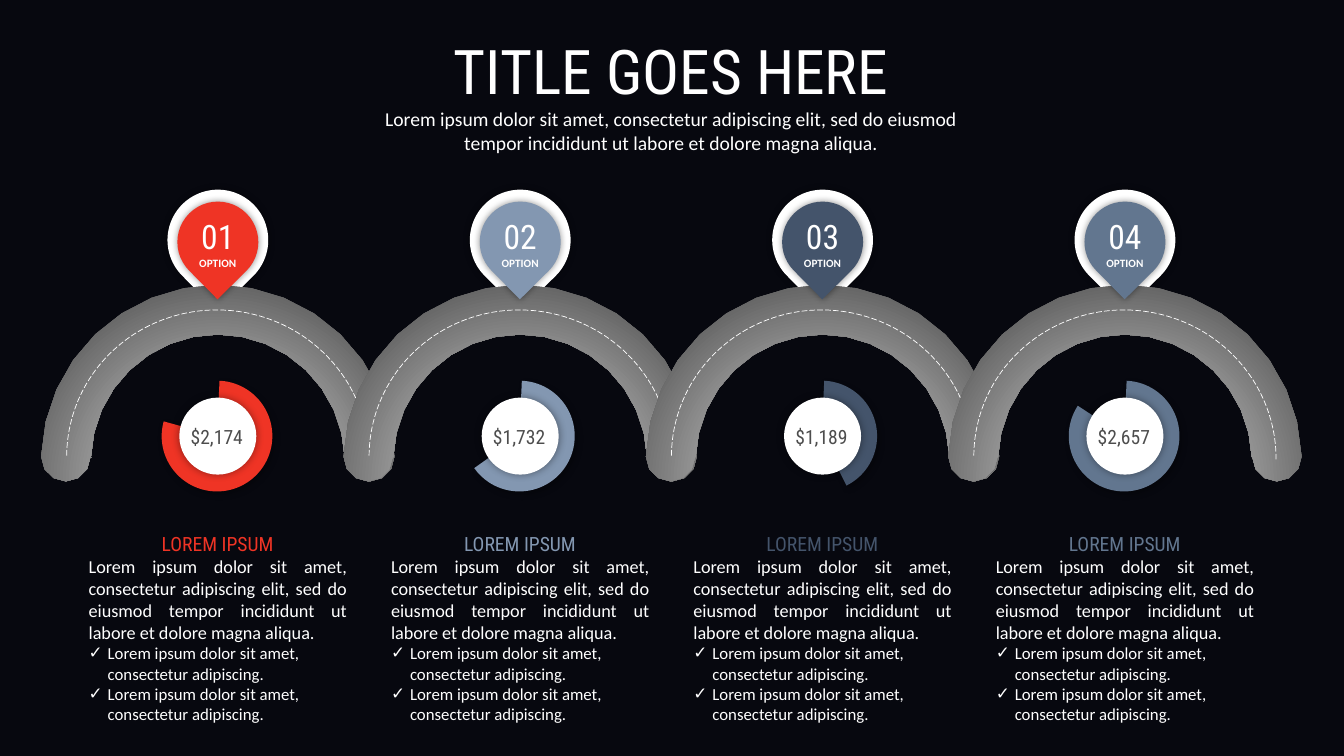
from math import cos, radians, sin

from pptx import Presentation
from pptx.dml.color import RGBColor
from pptx.enum.dml import MSO_LINE
from pptx.enum.shapes import MSO_SHAPE
from pptx.enum.text import MSO_ANCHOR, MSO_AUTO_SIZE, PP_ALIGN
from pptx.oxml import parse_xml
from pptx.oxml.ns import nsdecls, qn
from pptx.util import Cm, Pt

COLORS = {
    "night": "07080F",
    "white": "FFFFFF",
    "amount": "4D4D4D",
    "red": "EF3425",
    "mist": "8397B1",
    "slate": "44546B",
    "steel": "62768F",
}
ROAD_STOPS = [(0, "DBDBDB"), (46, "AAAAAA"), (100, "636363")]
HEADING = "Roboto Condensed"
BODY = "Calibri"
SENTENCE = (
    "Lorem ipsum dolor sit amet, consectetur adipiscing elit, sed do eiusmod "
    "tempor incididunt ut labore et dolore magna aliqua."
)
POINT = "Lorem ipsum dolor sit amet, consectetur adipiscing."
OPTIONS = [
    ("01", "$2,174", "red", 101.18),
    ("02", "$1,732", "mist", 131.63),
    ("03", "$1,189", "slate", 180.32),
    ("04", "$2,657", "steel", 90.48),
]
FIRST_CENTER, STEP = 5.49, 7.62


def arc_points(x, y, radius, start, end, pieces):
    angles = [radians(start + (end - start) * piece / pieces) for piece in range(pieces + 1)]
    return [(Cm(x + radius * cos(angle)), Cm(y - radius * sin(angle))) for angle in angles]


class RoadSlide:
    def __init__(self, deck):
        self.page = deck.slides.add_slide(deck.slide_layouts[4])
        background = self.page.background.fill
        background.solid()
        background.fore_color.rgb = self.color("night")
        self.bodies = [box for box in self.page.placeholders if box.placeholder_format.idx > 0]

    def color(self, name):
        return RGBColor.from_string(COLORS[name])

    def place(self, box, left, top, width, height):
        box.left, box.top, box.width, box.height = Cm(left), Cm(top), Cm(width), Cm(height)
        frame = box.text_frame
        frame.word_wrap = True
        frame.auto_size = MSO_AUTO_SIZE.SHAPE_TO_FIT_TEXT
        frame.vertical_anchor = MSO_ANCHOR.TOP
        return frame

    def text(self, left, top, width, height):
        box = self.page.shapes.add_textbox(0, 0, 0, 0)
        return self.place(box, left, top, width, height)

    def para(self, frame, text, size, font, color, align=PP_ALIGN.CENTER, bold=False, bullet=None):
        para = frame.paragraphs[0]
        if para.runs:
            para = frame.add_paragraph()
        para.add_run().text = text
        properties = para._p.get_or_add_pPr()
        indent = Cm(0.48) if bullet else 0
        properties.set("marL", str(indent))
        properties.set("indent", str(-indent))
        mark = f'<a:buChar {nsdecls("a")} char="{bullet}"/>' if bullet else f'<a:buNone {nsdecls("a")}/>'
        properties.append(parse_xml(mark))
        para.alignment = align
        para.space_before = Pt(0)
        para.font.size = Pt(size)
        para.font.name = font
        para.font.bold = bold
        para.font.color.rgb = self.color(color)

    def shape(self, kind, x, y, width, height, rotation=0):
        shape = self.page.shapes.add_shape(
            kind, Cm(x - width / 2), Cm(y - height / 2), Cm(width), Cm(height)
        )
        shape.rotation = rotation
        shape.shadow.inherit = False
        return shape

    def solid(self, kind, x, y, size, color, shadow, rotation=0):
        shape = self.shape(kind, x, y, size, size, rotation)
        shape.fill.solid()
        shape.fill.fore_color.rgb = self.color(color)
        shape.line.fill.background()
        alpha, blur, distance, direction = shadow
        effects = shape._element.spPr.find(qn("a:effectLst"))
        effects.append(parse_xml(
            f'<a:outerShdw {nsdecls("a")} blurRad="{Pt(blur)}" dist="{Pt(distance)}" '
            f'dir="{direction * 60000}" algn="ctr" rotWithShape="0">'
            f'<a:srgbClr val="000000"><a:alpha val="{alpha * 1000}"/></a:srgbClr></a:outerShdw>'
        ))
        return shape

    def pin(self, x, y, size, color):
        self.solid(MSO_SHAPE.TEAR, x, y, size, color, (40, 5, 0, 0), 135.3)

    def road(self, x):
        points = (
            arc_points(x, 11.63, 4.45, 178, 2, 16)
            + arc_points(x + 3.83, 11.51, 0.62, 0, -180, 6)
            + arc_points(x, 11.63, 3.2, 2, 178, 16)
            + arc_points(x - 3.83, 11.51, 0.62, 0, -180, 6)
        )
        builder = self.page.shapes.build_freeform(*points[0])
        builder.add_line_segments(points[1:], close=True)
        road = builder.convert_to_shape()
        road.shadow.inherit = False
        road.line.fill.background()
        road.fill.gradient()
        stops = "".join(
            f'<a:gs pos="{position * 1000}"><a:srgbClr val="{color}"/></a:gs>'
            for position, color in ROAD_STOPS
        )
        properties = road._element.spPr
        properties.replace(properties.find(qn("a:gradFill")), parse_xml(
            f'<a:gradFill {nsdecls("a")} rotWithShape="1"><a:gsLst>{stops}</a:gsLst>'
            '<a:path path="circle"><a:fillToRect l="50000" t="130000" r="50000" b="-30000"/>'
            '</a:path></a:gradFill>'
        ))
        lane = self.shape(MSO_SHAPE.ARC, x, 11.53, 7.44, 7.62, 277.4)
        lane.adjustments[0], lane.adjustments[1] = 158.01, 49.97
        lane.fill.background()
        lane.line.color.rgb = self.color("white")
        lane.line.width = Pt(0.5)
        lane.line.dash_style = MSO_LINE.LONG_DASH

    def gauge(self, x, amount, color, start):
        pie = self.solid(MSO_SHAPE.PIE, x - 0.02, 10.99, 2.79, color, (30, 4.5, 2.6, 53), 4)
        pie.adjustments[0], pie.adjustments[1] = start, 54.85
        pie._element.spPr.xfrm.set("flipV", "1")
        self.solid(MSO_SHAPE.OVAL, x, 10.99, 1.94, "white", (40, 6, 0, 0))
        frame = self.text(x - 1.04, 10.59, 2.03, 0.76)
        self.para(frame, amount, 14, HEADING, "amount")

    def description(self, body, x, color):
        frame = self.place(body, x - 3.51, 13.28, 7.01, 5.13)
        self.para(frame, "LOREM IPSUM", 14, HEADING, color)
        self.para(frame, SENTENCE, 13, BODY, "white", PP_ALIGN.JUSTIFY)
        for _ in range(2):
            self.para(frame, POINT, 12, BODY, "white", PP_ALIGN.LEFT, bullet="✓")

    def marker(self, x, number, color):
        self.pin(x, 6.1, 2.04, color)
        frame = self.text(x - 0.76, 5.31, 1.52, 1.63)
        self.para(frame, number, 24, HEADING, "white")
        self.para(frame, "OPTION", 8, BODY, "white", bold=True)

    def title(self):
        frame = self.place(self.page.shapes.title, 9.27, 0.71, 15.29, 3.33)
        self.para(frame, "TITLE GOES HERE", 44, HEADING, "white")
        self.para(frame, SENTENCE, 14, BODY, "white")


def main():
    deck = Presentation()
    deck.slide_width, deck.slide_height = Cm(33.87), Cm(19.05)
    slide = RoadSlide(deck)
    slide.title()
    for index, (number, amount, color, start) in enumerate(OPTIONS):
        x = FIRST_CENTER + STEP * index
        slide.pin(x, 6.05, 2.54, "white")
        slide.road(x)
        slide.gauge(x, amount, color, start)
        slide.description(slide.bodies[index], x, color)
        slide.marker(x, number, color)
    deck.save("out.pptx")


if __name__ == "__main__":
    main()
